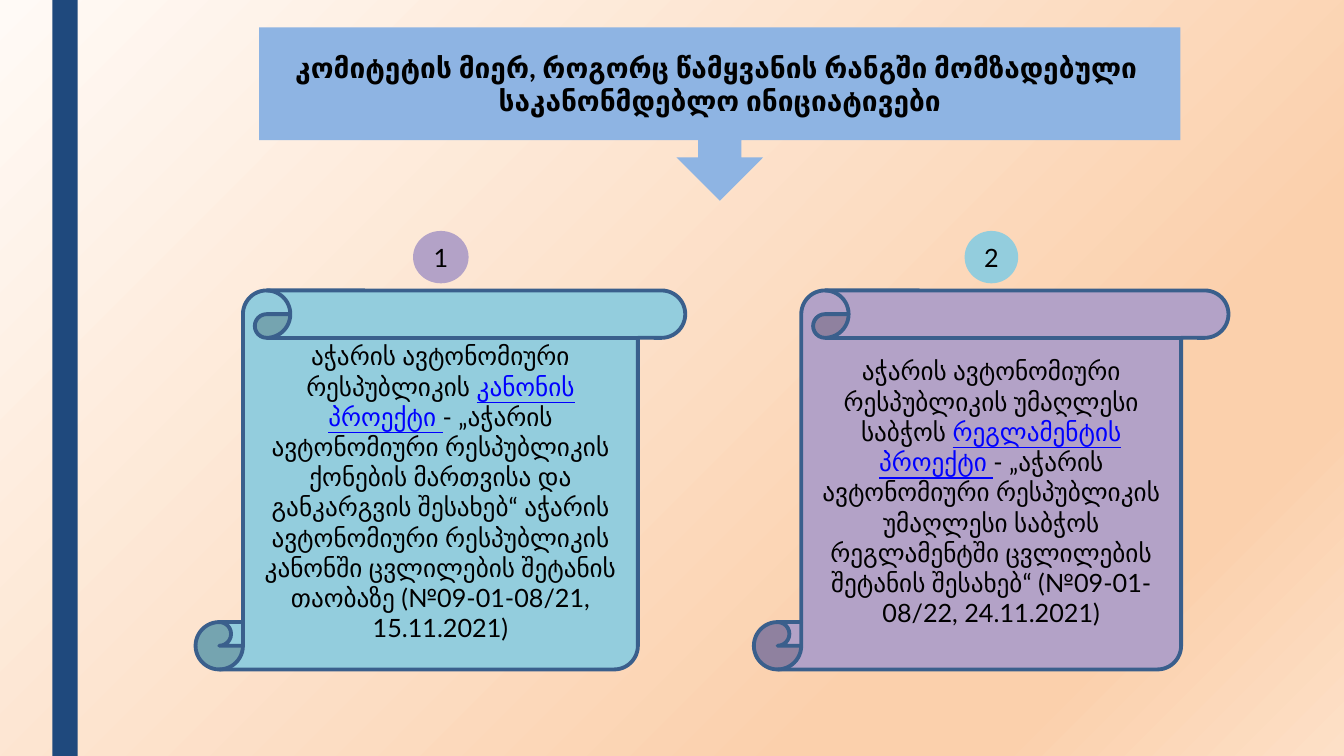
import pptx
import pptx.dml.color
import pptx.enum.shapes
import pptx.enum.text
import pptx.oxml.ns
import pptx.util
from lxml import etree

Cm = pptx.util.Cm
Pt = pptx.util.Pt
qn = pptx.oxml.ns.qn
Preset = pptx.enum.shapes.MSO_SHAPE

BLUE, TEAL, PURPLE = "8EB4E3", "93CDDD", "B3A2C7"


def color(hex_value):
    return pptx.dml.color.RGBColor.from_string(hex_value)


class InitiativesSlide:
    font = "Lato"
    ink, link, outline, navy = "000000", "0000FF", "3A5F8C", "1F497D"

    def __init__(self, deck):
        self.slide = deck.slides.add_slide(deck.slide_layouts[6])

    def background(self, stops, angle):
        fill = self.slide.background.fill
        fill.gradient()
        fill.gradient_angle = 360 - angle
        stop_list = next(self.slide.element.iter(qn("a:gsLst")))
        for old_stop in list(stop_list):
            stop_list.remove(old_stop)
        for percent, hex_value in stops:
            stop = etree.SubElement(stop_list, qn("a:gs"), pos=str(percent * 1000))
            etree.SubElement(stop, qn("a:srgbClr"), val=hex_value)

    def panel(self, preset, box, fill):
        panel = self.slide.shapes.add_shape(preset, *(Cm(length) for length in box))
        panel.shadow.inherit = False
        panel.fill.solid()
        panel.fill.fore_color.rgb = color(fill)
        panel.line.fill.background()
        return panel

    def add_text(self, panel, paragraphs, size=18, bold=False):
        """Each paragraph is a list of (text, is_link) runs."""
        frame = panel.text_frame
        frame.word_wrap = True
        frame.vertical_anchor = pptx.enum.text.MSO_ANCHOR.MIDDLE
        for index, runs in enumerate(paragraphs):
            paragraph = frame.add_paragraph() if index else frame.paragraphs[0]
            paragraph.alignment = pptx.enum.text.PP_ALIGN.CENTER
            for text, is_link in runs:
                run = paragraph.add_run()
                run.text = text
                run.font.name = self.font
                run.font.size = Pt(size)
                run.font.bold = bold
                run.font.underline = is_link
                run.font.color.rgb = color(self.link if is_link else self.ink)

    def side_bar(self):
        self.panel(Preset.RECTANGLE, (1.32, 0, 0.64, 19.05), self.navy)

    def heading(self, box, lines):
        callout = self.panel(Preset.DOWN_ARROW_CALLOUT, box, BLUE)
        self.add_text(callout, [[(line, False)] for line in lines], 20, True)

    def badge(self, number, left, width, fill):
        badge = self.panel(Preset.OVAL, (left, 5.82, width, 1.32), fill)
        self.add_text(badge, [[(str(number), False)]])

    def scroll(self, left, width, fill, runs):
        scroll = self.panel(Preset.VERTICAL_SCROLL, (left, 7.32, width, 9.55), fill)
        scroll.line.color.rgb = color(self.outline)
        scroll.line.width = Pt(2.75)
        self.add_text(scroll, [runs])


# Number, badge (left, width, fill), scroll (left, width, fill), text runs
INITIATIVES = [
    (1, (10.41, 1.4, PURPLE), (4.93, 12.34, TEAL), [
        ("აჭარის ავტონომიური რესპუბლიკის ", False),
        ("კანონის პროექტი ", True),
        ("- „აჭარის ავტონომიური რესპუბლიკის ქონების მართვისა და განკარგვის "
         "შესახებ“ აჭარის ავტონომიური რესპუბლიკის კანონში ცვლილების შეტანის "
         "თაობაზე (№09-01-08/21, 15.11.2021)", False),
    ]),
    (2, (24.31, 1.35, TEAL), (19, 11.96, PURPLE), [
        ("აჭარის ავტონომიური რესპუბლიკის უმაღლესი საბჭოს ", False),
        ("რეგლამენტის პროექტი ", True),
        ("- „აჭარის ავტონომიური რესპუბლიკის უმაღლესი საბჭოს რეგლამენტში "
         "ცვლილების შეტანის შესახებ“ (№09-01-08/22, 24.11.2021)", False),
    ]),
]


def main():
    deck = pptx.Presentation()
    deck.slide_width, deck.slide_height = Cm(33.87), Cm(19.05)
    page = InitiativesSlide(deck)

    # Backdrop
    page.background([(0, "FFFAF6"), (74, "FBD0AC"), (83, "FBD0AC"), (100, "FDE0C7")], 45)
    page.side_bar()

    # Heading with its arrow
    page.heading((6.53, 0.69, 23.22, 4.37), [
        "კომიტეტის მიერ, როგორც წამყვანის რანგში მომზადებული ",
        "საკანონმდებლო ინიციატივები",
    ])

    # Numbered initiatives
    for number, badge, scroll, runs in INITIATIVES:
        page.badge(number, *badge)
        page.scroll(*scroll, runs)

    deck.save("out.pptx")


if __name__ == "__main__":
    main()
